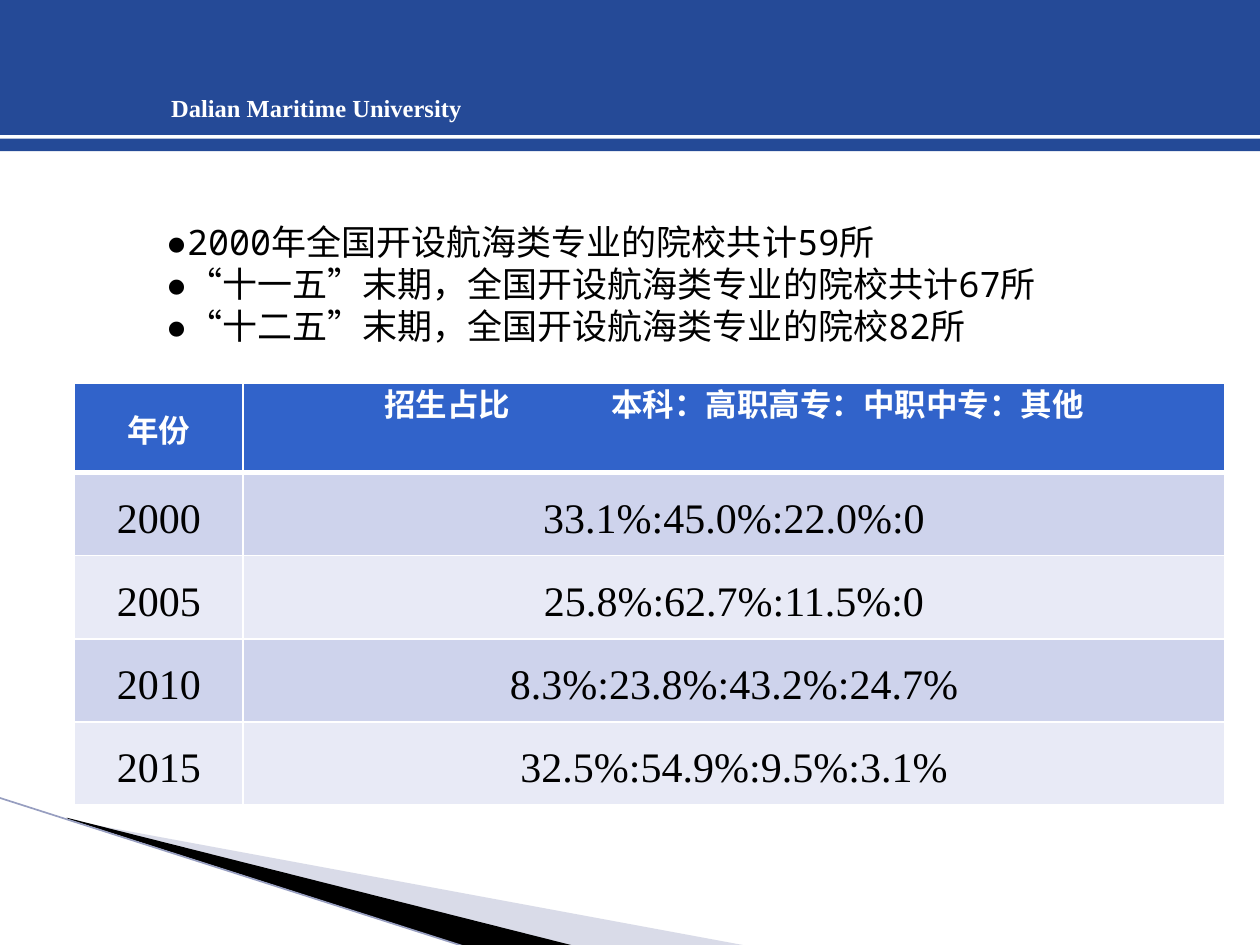
from lxml import etree
from pptx import Presentation
from pptx.dml.color import RGBColor
from pptx.enum import shapes, text
from pptx.oxml import ns
from pptx.util import Inches, Pt

COLORS = {"banner": "254A97", "stripe": "244A97", "white": "FFFFFF", "black": "000000",
          "wedge": "A1A7C6", "edge": "979EC0", "head": "3163CA",
          "odd": "CED3EC", "even": "E8EAF6"}
SERIF = "Times New Roman"
MONO = "Noto Sans Mono"
POINTS = ["2000年全国开设航海类专业的院校共计59所",
          "“十一五”末期，全国开设航海类专业的院校共计67所",
          "“十二五”末期，全国开设航海类专业的院校82所"]
HEADER = ["年份", "招生占比\t本科：高职高专：中职中专：其他"]
SHARES = [["2000", "33.1%:45.0%:22.0%:0"],
          ["2005", "25.8%:62.7%:11.5%:0"],
          ["2010", "8.3%:23.8%:43.2%:24.7%"],
          ["2015", "32.5%:54.9%:9.5%:3.1%"]]


def rgb(name):
    return RGBColor.from_string(COLORS[name])


def add(parent, tag, **attributes):
    return etree.SubElement(parent, ns.qn(tag), attributes)


def style(paragraph, font, size, color, bold=False):
    for run in paragraph.runs:
        run.font.name = font
        run.font.size = Pt(size)
        run.font.bold = bold
        run.font.color.rgb = rgb(color)


def paint(shape, color):
    shape.shadow.inherit = False
    shape.fill.solid()
    shape.fill.fore_color.rgb = rgb(color)
    shape.line.fill.background()


def add_wedge(slide, points, color, opacity=100):
    start, *rest = [(Inches(x), Inches(y)) for x, y in points]
    builder = slide.shapes.build_freeform(*start, scale=1.0)
    builder.add_line_segments(rest, close=True)
    wedge = builder.convert_to_shape()
    paint(wedge, color)
    if opacity < 100:
        fill = wedge._element.spPr.find(ns.qn("a:solidFill"))
        add(fill[0], "a:alpha", val=str(opacity * 1000))


def add_corner(slide, left, top):
    """Draw the folded wedges and their edge line in the lower left corner."""
    pale = [(0.55, 0.18), (5.95, 1.18), (4.56, 1.18), (0.55, 0.17)]
    dark = [(0.53, 0.16), (4.57, 1.18), (3.72, 1.19), (0.54, 0.17)]
    for points, color, opacity in [(pale, "wedge", 40), (dark, "black", 100)]:
        add_wedge(slide, [(left + x, top + y) for x, y in points], color, opacity)
    edge = slide.shapes.add_connector(
        shapes.MSO_CONNECTOR.STRAIGHT, Inches(left - 0.01), Inches(top),
        Inches(left + 3.71), Inches(top + 1.19))
    edge.line.color.rgb = rgb("edge")
    edge.line.width = Pt(0.95)
    add(edge._element.spPr, "a:effectLst")


def add_banner(slide, left, top, width):
    for offset, height, color in [(-0.01, 1.08, "banner"), (1.1, 0.1, "stripe")]:
        band = slide.shapes.add_shape(
            shapes.MSO_SHAPE.RECTANGLE, Inches(left), Inches(top + offset),
            Inches(width), Inches(height))
        paint(band, color)
    university = slide.shapes.add_textbox(
        Inches(left + 1.26), Inches(top + 0.69), Inches(2.58), Inches(0.33)).text_frame
    university.word_wrap = True
    university.text = "Dalian Maritime University"
    style(university.paragraphs[0], SERIF, 14, "white", bold=True)


def add_points(slide, left, top, width, height):
    frame = slide.shapes.add_textbox(
        Inches(left), Inches(top), Inches(width), Inches(height)).text_frame
    frame.word_wrap = True
    frame.margin_right = 0
    frame.text = "\n".join(POINTS)
    for paragraph in frame.paragraphs:
        properties = paragraph._p.get_or_add_pPr()
        add(properties, "a:buFont", typeface=MONO)
        add(properties, "a:buChar", char="●")
        style(paragraph, MONO, 20, "black")


def set_borders(cell, bottom):
    """Rule the cell in white; the fill must come after the borders."""
    properties = cell._tc.get_or_add_tcPr()
    for side, width in [("L", 1), ("R", 1), ("T", 1), ("B", bottom)]:
        border = add(properties, f"a:ln{side}", w=str(Pt(width)))
        add(add(border, "a:solidFill"), "a:srgbClr", val=COLORS["white"])


def fill_cell(cell, wording, color, is_header):
    set_borders(cell, bottom=3 if is_header else 1)
    cell.fill.solid()
    cell.fill.fore_color.rgb = rgb(color)
    cell.margin_left = cell.margin_right = Inches(0.07)
    cell.margin_top = cell.margin_bottom = 0
    cell.vertical_anchor = text.MSO_ANCHOR.TOP
    cell.text = wording
    paragraph = cell.text_frame.paragraphs[0]
    paragraph.alignment = text.PP_ALIGN.CENTER
    paragraph.line_spacing = 1.5
    if is_header:
        style(paragraph, SERIF, 18, "white", bold=True)
    else:
        style(paragraph, SERIF, 24, "black")


def align_share_header(cell):
    """Set the two parts of the heading apart with a tab stop."""
    cell.margin_left = Inches(1.12)
    cell.margin_top = Inches(0.17)
    paragraph = cell.text_frame.paragraphs[0]
    paragraph.alignment = text.PP_ALIGN.LEFT
    paragraph.line_spacing = Pt(12)
    stops = add(paragraph._p.get_or_add_pPr(), "a:tabLst")
    add(stops, "a:tab", pos=str(Inches(1.8)), algn="l")


def add_shares(slide, left, top, width, height):
    rows = [HEADER] + SHARES
    table = slide.shapes.add_table(
        len(rows), len(HEADER), Inches(left), Inches(top),
        Inches(width), Inches(height)).table
    year_width, header_height = 1.34, 0.71
    table.columns[0].width = Inches(year_width)
    table.columns[1].width = Inches(width - year_width)
    for index, row in enumerate(rows):
        is_header = index == 0
        row_height = header_height if is_header else (height - header_height) / len(SHARES)
        table.rows[index].height = Inches(row_height)
        color = "head" if is_header else ("odd" if index % 2 else "even")
        for column, wording in enumerate(row):
            fill_cell(table.cell(index, column), wording, color, is_header)
    align_share_header(table.cell(0, 1))


def main():
    presentation = Presentation()
    presentation.slide_width = Inches(10)
    presentation.slide_height = Inches(7.5)
    slide = presentation.slides.add_slide(presentation.slide_layouts[6])
    add_corner(slide, 0, 6.33)
    add_banner(slide, 0, 0, 10)
    add_points(slide, 1.22, 1.7, 7.24, 1.41)
    add_shares(slide, 0.59, 3.04, 9.13, 3.35)
    presentation.save("out.pptx")


if __name__ == "__main__":
    main()
